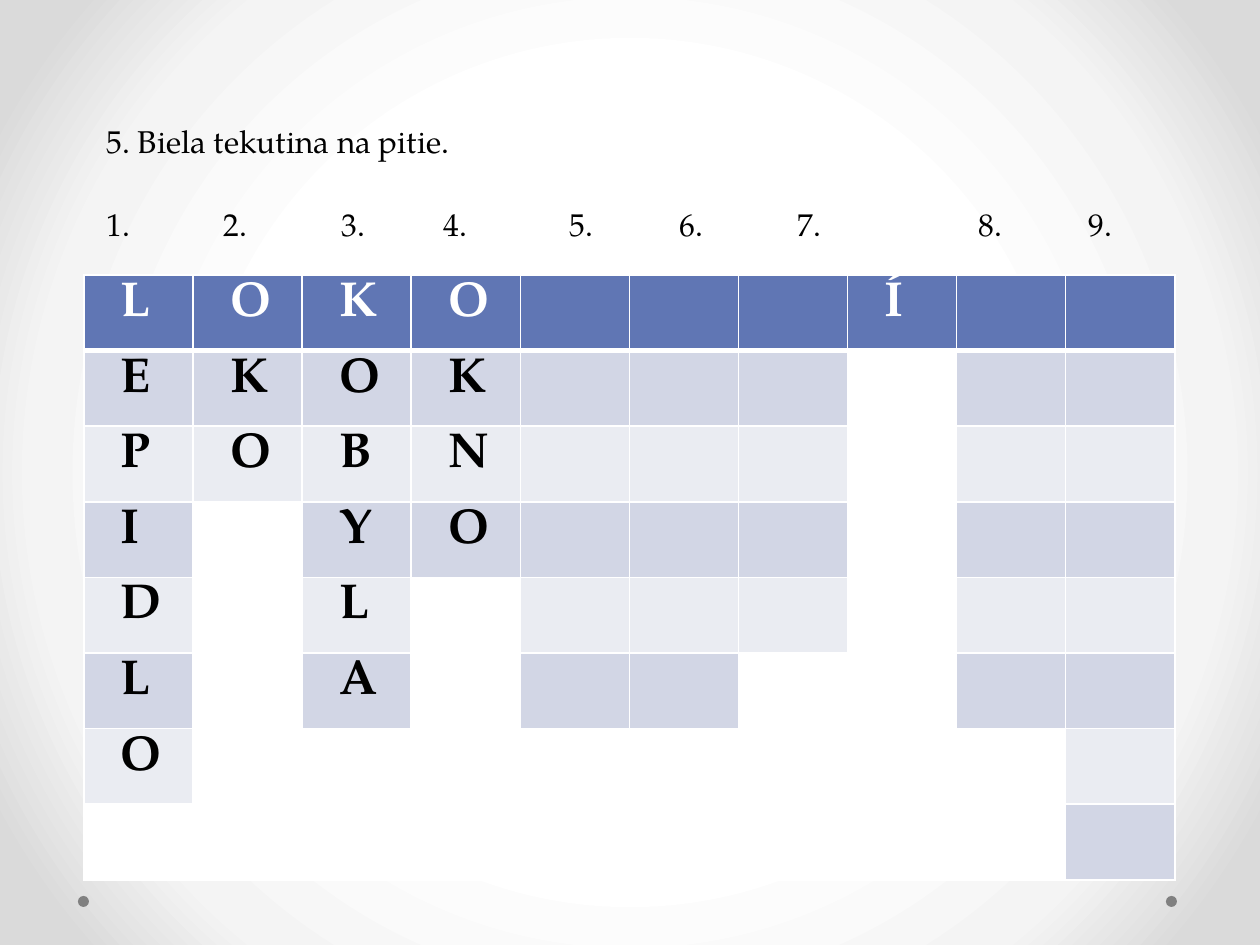
from lxml import etree
from pptx import Presentation
from pptx.dml.color import RGBColor
from pptx.enum.shapes import MSO_SHAPE as Shape
from pptx.oxml import parse_xml
from pptx.oxml.ns import nsdecls, qn
from pptx.util import Pt

PX = 914400 / 126
FONT = "TeX Gyre Pagella"
COLORS = {
    "header": "6076B4", "band_dark": "D2D6E5", "band_light": "EAECF2",
    "white": "FFFFFF", "pale": "F4F4F4", "edge": "DADADA",
    "text": "000000", "dot": "808080",
}


def px(*lengths):
    return [round(length * PX) for length in lengths]


def format_text(paragraph, size, color, bold=False):
    for run in paragraph.runs:
        run.font.name = FONT
        run.font.size = Pt(size)
        run.font.bold = bold
        run.font.color.rgb = RGBColor.from_string(COLORS[color])


presentation = Presentation()
presentation.slide_width, presentation.slide_height = px(1260, 945)
slide = presentation.slides.add_slide(presentation.slide_layouts[6])

# Radial background
stops = "".join(
    f'<a:gs pos="{position * 1000}"><a:srgbClr val="{COLORS[name]}"/></a:gs>'
    for position, name in [(50, "white"), (76, "pale"), (92, "edge")]
)
background = parse_xml(
    f'<p:bg {nsdecls("p", "a")}><p:bgPr><a:gradFill rotWithShape="1">'
    f'<a:gsLst>{stops}</a:gsLst><a:path path="circle">'
    '<a:fillToRect l="50000" t="50000" r="50000" b="50000"/></a:path>'
    '</a:gradFill><a:effectLst/></p:bgPr></p:bg>'
)
slide.element.cSld.insert(0, background)

# Corner dots
for left in (1166, 78):
    dot = slide.shapes.add_shape(Shape.OVAL, *px(left, 896, 11, 11))
    dot.shadow.inherit = False
    dot.fill.solid()
    dot.fill.fore_color.rgb = RGBColor.from_string(COLORS["dot"])
    dot.line.fill.background()

# Crossword: each column has an answer so far and a number of boxes
answers = ["LEPIDLO", "OKO", "KOBYLA", "OKNO", "", "", "", "Í", "", ""]
box_counts = [7, 3, 6, 4, 6, 6, 5, 1, 6, 8]
row_count = max(box_counts)
table = slide.shapes.add_table(
    row_count, len(answers), *px(84, 275, 1091, 605)).table
table.first_row = False
table.horz_banding = False

for column, (answer, box_count) in enumerate(zip(answers, box_counts)):
    for row in range(row_count):
        cell = table.cell(row, column)
        cell.margin_left = px(37)[0]
        if row >= box_count:
            fill = "white"
        elif row == 0:
            fill = "header"
        else:
            fill = "band_dark" if row % 2 else "band_light"
        cell.fill.solid()
        cell.fill.fore_color.rgb = RGBColor.from_string(COLORS[fill])
        if row < len(answer):
            cell.text_frame.text = answer[row]
            format_text(cell.text_frame.paragraphs[0], 28,
                        "text" if row else "white", bold=True)

        # White cell borders, thicker below the first row
        cell_properties = cell._tc.get_or_add_tcPr()
        for index, side in enumerate("LRTB"):
            thick = (row, side) in [(0, "B"), (1, "T")]
            border = parse_xml(
                f'<a:ln{side} {nsdecls("a")} w="{Pt(3 if thick else 1)}">'
                f'<a:solidFill><a:srgbClr val="{COLORS["white"]}"/></a:solidFill>'
                f'</a:ln{side}>'
            )
            cell_properties.insert(index, border)

# Column numbers and clue
numbers = "\t".join(f"{number}." for number in range(1, 10))
clue = "5. Biela tekutina na pitie."
for text, top, width in [(numbers, 199, 1067), (clue, 116, 373)]:
    text_box = slide.shapes.add_textbox(*px(94, top, width, 50))
    text_box.text_frame.word_wrap = False
    paragraph = text_box.text_frame.paragraphs[0]
    paragraph.text = text
    format_text(paragraph, 18, "text")
    if text == numbers:
        tab_list = etree.SubElement(
            paragraph._p.get_or_add_pPr(), qn("a:tabLst"))
        for position in px(117, 235, 337, 463, 573, 691, 872, 982):
            etree.SubElement(
                tab_list, qn("a:tab"), pos=str(position), algn="l")

presentation.save("out.pptx")
